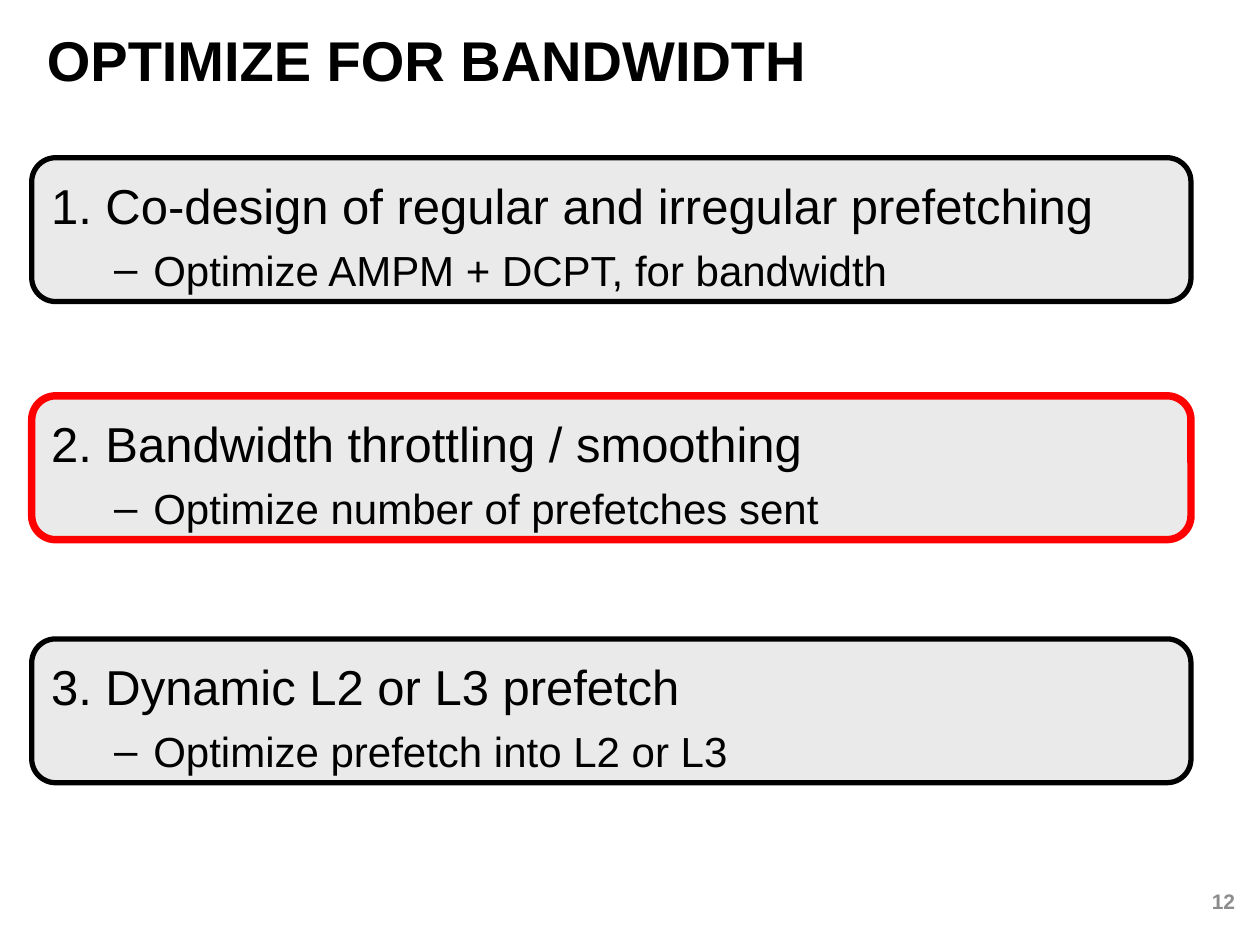
import pptx
import pptx.util
import pptx.dml.color
import pptx.enum.shapes
import pptx.enum.text
import lxml.etree
from pptx.oxml.ns import qn

Cm = pptx.util.Cm
Pt = pptx.util.Pt
Align = pptx.enum.text.PP_ALIGN
Anchor = pptx.enum.text.MSO_ANCHOR


def color(hex_value):
    return pptx.dml.color.RGBColor.from_string(hex_value)


def write(paragraph, text, size, hex_value="000000", bold=False, align=Align.LEFT):
    paragraph.text = text
    paragraph.alignment = align
    font_format = {"name": "Arial", "size": Pt(size), "bold": bold}
    for attribute, value in font_format.items():
        setattr(paragraph.font, attribute, value)
    paragraph.font.color.rgb = color(hex_value)


deck = pptx.Presentation()
deck.slide_width, deck.slide_height = Cm(25.4), Cm(19.05)
slide = deck.slides.add_slide(deck.slide_layouts[5])

heading = slide.shapes.title
heading_format = {"left": Cm(0.69), "top": Cm(0.51), "width": Cm(23.29), "height": Cm(1.35)}
for attribute, value in heading_format.items():
    setattr(heading, attribute, value)
heading.text_frame.auto_size = pptx.enum.text.MSO_AUTO_SIZE.NONE
heading.text_frame.vertical_anchor = Anchor.MIDDLE
write(heading.text_frame.paragraphs[0], "OPTIMIZE FOR BANDWIDTH", 32, bold=True)

page_number = slide.shapes.add_textbox(Cm(19.23), Cm(17.65), Cm(5.92), Cm(1.02))
page_number.text_frame.word_wrap = True
page_number.text_frame.vertical_anchor = Anchor.MIDDLE
write(page_number.text_frame.paragraphs[0], "12", 12, "8C8C8C", True, Align.RIGHT)

rounded = pptx.enum.shapes.MSO_SHAPE.ROUNDED_RECTANGLE
card_left, card_width, card_height = Cm(0.64), Cm(23.37), Cm(2.9)
highlight_top = Cm(7.98)
strategies = [
    (Cm(3.18), "1. Co-design of regular and irregular prefetching", "Optimize AMPM + DCPT, for bandwidth"),
    (highlight_top, "2. Bandwidth throttling / smoothing", "Optimize number of prefetches sent"),
    (Cm(12.88), "3. Dynamic L2 or L3 prefetch", "Optimize prefetch into L2 or L3"),
]
card_text_format = {"word_wrap": True, "vertical_anchor": Anchor.MIDDLE, "margin_top": Cm(0.35)}

for top, strategy, goal in strategies:
    card = slide.shapes.add_shape(rounded, card_left, top, card_width, card_height)
    card.shadow.inherit = False
    card.fill.solid()
    card.fill.fore_color.rgb = color("EAEAEA")
    card.line.color.rgb = color("000000")
    card.line.width = Pt(3)
    for attribute, value in card_text_format.items():
        setattr(card.text_frame, attribute, value)
    write(card.text_frame.paragraphs[0], strategy, 28)

    goal_line = card.text_frame.add_paragraph()
    goal_line.level = 1
    goal_line.space_before = Pt(5.5)
    properties = goal_line._p.get_or_add_pPr()
    properties.set("marL", str(Cm(2.06)))
    properties.set("indent", str(Cm(-0.79)))
    lxml.etree.SubElement(properties, qn("a:buFont"), typeface="Arial")
    lxml.etree.SubElement(properties, qn("a:buChar"), char="–")
    write(goal_line, goal, 24)

highlight = slide.shapes.add_shape(rounded, card_left, highlight_top, card_width, card_height)
highlight.shadow.inherit = False
highlight.fill.background()
highlight.line.color.rgb = color("FF0000")
highlight.line.width = Pt(4.25)

deck.save("out.pptx")
